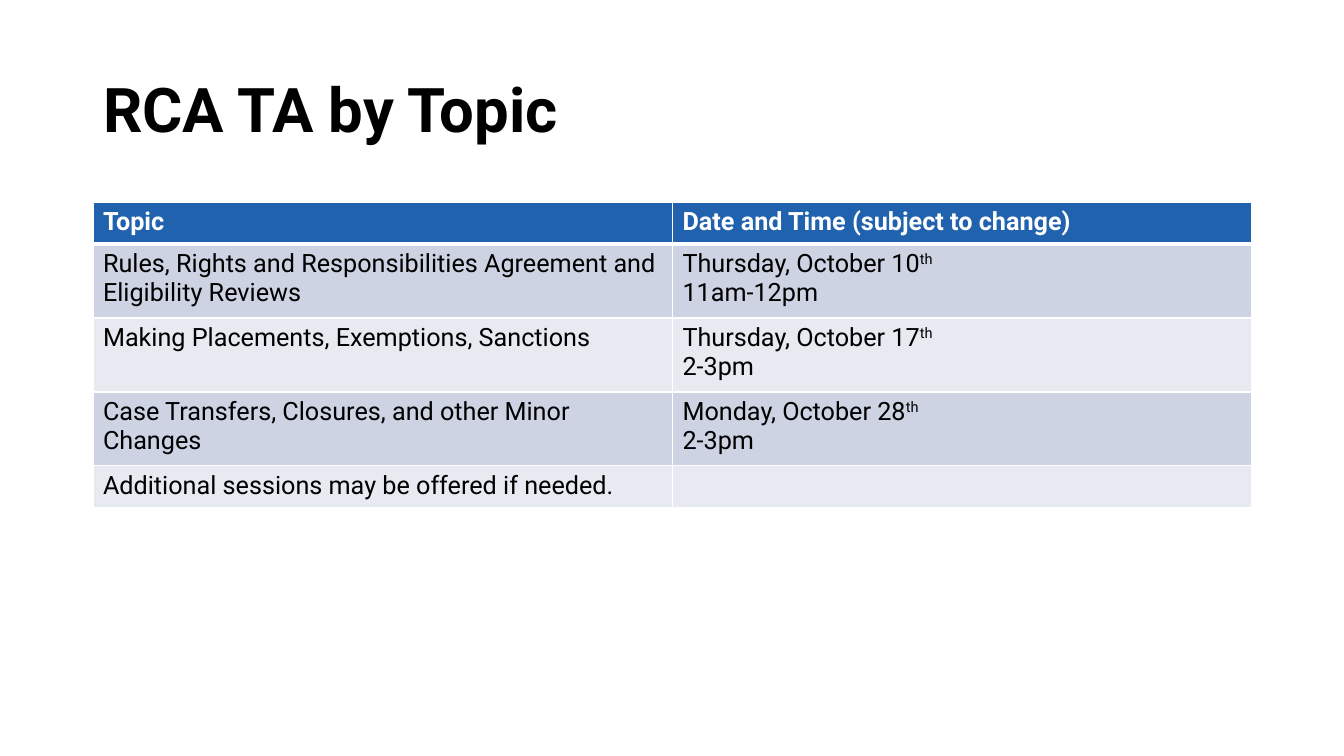
from lxml import etree
from pptx import Presentation
from pptx import util as u
from pptx.dml.color import RGBColor
from pptx.enum import text
from pptx.oxml import ns

SCALE = 914400 / 100.8
HEAD, DARK, LIGHT = "2162AE", "CDD3E3", "E8EAF2"
TOPICS = [
    ("Topic", "Date and Time (subject to change)"),
    ("Rules, Rights and Responsibilities Agreement and Eligibility Reviews",
     "Thursday, October 10^th\n11am-12pm"),
    ("Making Placements, Exemptions, Sanctions", "Thursday, October 17^th\n2-3pm"),
    ("Case Transfers, Closures, and other Minor Changes", "Monday, October 28^th\n2-3pm"),
    ("Additional sessions may be offered if needed.", ""),
]


def px(n):
    return u.Emu(round(n * SCALE))


def rgb(code):
    return RGBColor.from_string(code)


class Deck:
    font = "Roboto"

    def __init__(self):
        self.prs = Presentation()
        self.prs.slide_width, self.prs.slide_height = px(1344), px(756)
        self.slide = self.prs.slides.add_slide(self.prs.slide_layouts[5])

    def style(self, run, color, **form):
        for key, val in {"name": self.font, **form}.items():
            setattr(run.font, key, val)
        run.font.color.rgb = rgb(color)

    def title(self, words, x, y, w, h):
        box = self.slide.shapes.title
        box.left, box.top, box.width, box.height = map(px, (x, y, w, h))
        frame = box.text_frame
        frame.word_wrap = True
        frame.vertical_anchor = text.MSO_ANCHOR.MIDDLE
        para = frame.paragraphs[0]
        para.alignment = text.PP_ALIGN.LEFT
        para.line_spacing = 0.9
        run = para.add_run()
        run.text = words
        self.style(run, "000000", size=u.Pt(44), bold=True)

    def label(self, cell, words, color, bold):
        # A caret splits off a raised ending
        for i, line in enumerate(words.split("\n") if words else []):
            frame = cell.text_frame
            para = frame.add_paragraph() if i else frame.paragraphs[0]
            for j, part in enumerate(line.split("^")):
                run = para.add_run()
                run.text = part
                self.style(run, color, size=u.Pt(18), bold=bold)
                if j:
                    run._r.get_or_add_rPr().set("baseline", "30000")

    def edge(self, cell, widths):
        props = cell._tc.get_or_add_tcPr()
        for i, (side, pts) in enumerate(widths.items()):
            line = etree.Element(ns.qn(f"a:ln{side}"), w=str(u.Pt(pts)))
            fill = etree.SubElement(line, ns.qn("a:solidFill"))
            etree.SubElement(fill, ns.qn("a:srgbClr"), val="FFFFFF")
            props.insert(i, line)

    def table(self, rows, x, y, w, highs):
        grid = self.slide.shapes.add_table(
            len(rows), len(rows[0]), px(x), px(y), px(w), px(sum(highs))).table
        for r, (row, high) in enumerate(zip(rows, highs)):
            grid.rows[r].height = px(high)
            top = r == 0
            shade = HEAD if top else (LIGHT, DARK)[r % 2]
            for c, words in enumerate(row):
                cell = grid.cell(r, c)
                cell.fill.solid()
                cell.fill.fore_color.rgb = rgb(shade)
                self.edge(cell, {"L": 1, "R": 1, "T": 3 if r == 1 else 1,
                                 "B": 3 if top else 1})
                self.label(cell, words, "FFFFFF" if top else "000000", top)


def main():
    deck = Deck()
    # Heading
    deck.title("RCA TA by Topic", 93, 40, 1159, 146)
    # Schedule
    deck.table(TOPICS, 93, 202, 1159, [42, 74, 74, 74, 42])
    deck.prs.save("out.pptx")


if __name__ == "__main__":
    main()
